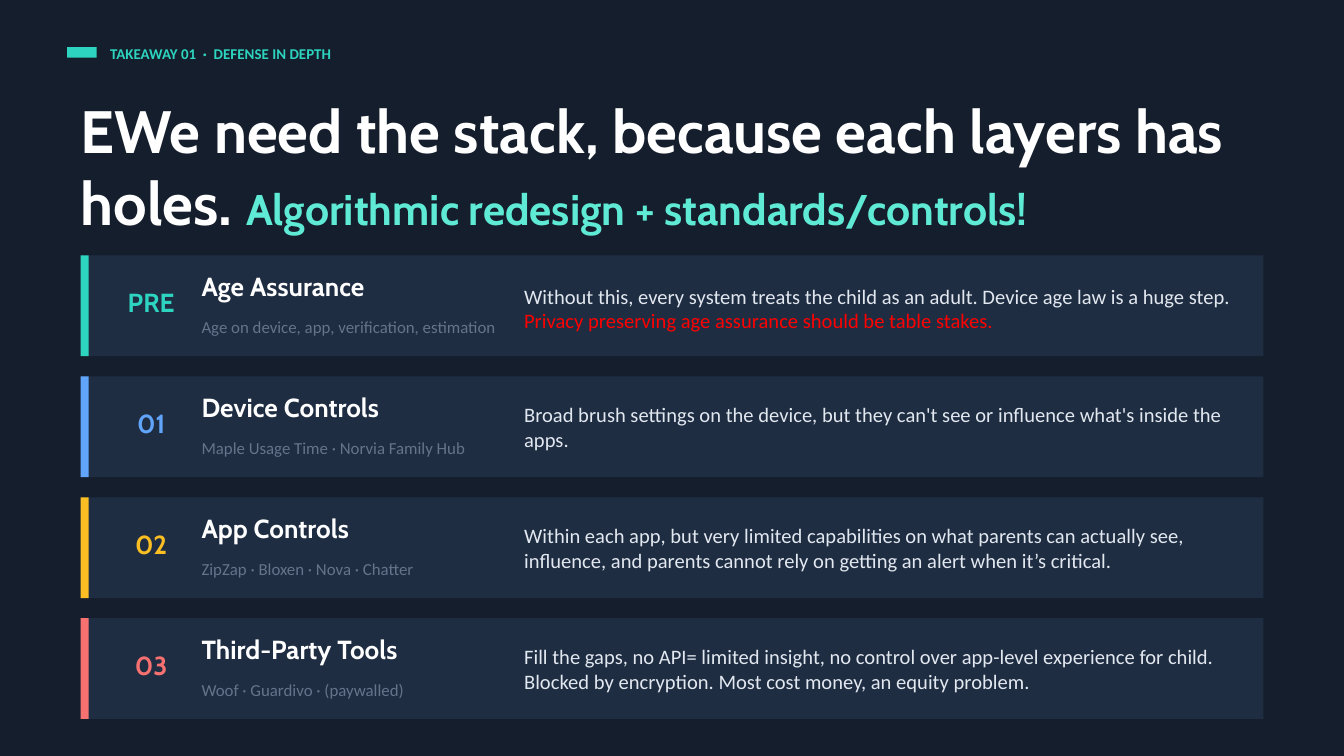
import pptx
import pptx.dml.color
import pptx.enum.shapes
import pptx.enum.text
import pptx.util

Pt = pptx.util.Pt
RGBColor = pptx.dml.color.RGBColor
Align = pptx.enum.text.PP_ALIGN
Anchor = pptx.enum.text.MSO_ANCHOR

NIGHT = RGBColor(0x15, 0x1E, 0x2C)
PANEL = RGBColor(0x1F, 0x2D, 0x42)
TEAL = RGBColor(0x2D, 0xD4, 0xBF)
MINT = RGBColor(0x5E, 0xEA, 0xD4)
BLUE = RGBColor(0x60, 0xA5, 0xFA)
AMBER = RGBColor(0xFB, 0xBF, 0x24)
CORAL = RGBColor(0xF8, 0x71, 0x71)
RED = RGBColor(0xFF, 0x00, 0x00)
WHITE = RGBColor(0xFF, 0xFF, 0xFF)
MIST = RGBColor(0xE2, 0xE8, 0xF0)
SLATE = RGBColor(0x64, 0x74, 0x8B)

HEADING_FONT = "Cabin"
BODY_FONT = "Calibri"
MARGIN = 43.2
CONTENT_WIDTH = 633.6
FIRST_LAYER_TOP = 136.8
LAYER_PITCH = 64.8
LAYER_HEIGHT = 54

LAYERS = [
    ("PRE", TEAL, "Age Assurance", "Age on device, app, verification, estimation", 26.6,
     [("Without this, every system treats the child as an adult. "
       "Device age law is a huge step. ", MIST),
      ("Privacy preserving age assurance should be table stakes.", RED)]),
    ("01", BLUE, "Device Controls", "Maple Usage Time · Norvia Family Hub", 23.8,
     [("Broad brush settings on the device, but they can't see or influence "
       "what's inside the apps.", MIST)]),
    ("02", AMBER, "App Controls", "ZipZap · Bloxen · Nova · Chatter", 23.8,
     [("Within each app, but very limited capabilities on what parents can actually see, "
       "influence, and parents cannot rely on getting an alert when it’s critical.", MIST)]),
    ("03", CORAL, "Third-Party Tools", "Woof · Guardivo · (paywalled)", 23.8,
     [("Fill the gaps, no API= limited insight, no control over app-level experience "
       "for child. Blocked by encryption. Most cost money, an equity problem.", MIST)]),
]


def add_block(slide, left, top, width, height, color):
    """Add a plain filled rectangle."""
    block = slide.shapes.add_shape(
        pptx.enum.shapes.MSO_SHAPE.RECTANGLE, Pt(left), Pt(top), Pt(width), Pt(height))
    block.shadow.inherit = False
    block.fill.solid()
    block.fill.fore_color.rgb = color
    block.line.fill.background()


def write_runs(frame, runs, font, bold, align, anchor):
    """Fill a text frame with one paragraph of (text, size, colour) runs."""
    frame.margin_left = frame.margin_top = frame.margin_right = frame.margin_bottom = 0
    frame.word_wrap = True
    frame.auto_size = pptx.enum.text.MSO_AUTO_SIZE.SHAPE_TO_FIT_TEXT
    frame.vertical_anchor = anchor
    paragraph = frame.paragraphs[0]
    paragraph.alignment = align
    for text, size, color in runs:
        run = paragraph.add_run()
        run.text = text
        run.font.name = font
        run.font.size = Pt(size)
        run.font.bold = bold
        run.font.color.rgb = color


def add_label(slide, left, top, width, height, runs, font=BODY_FONT, bold=False,
              align=Align.LEFT):
    """Add a vertically centred text box without margins."""
    label = slide.shapes.add_textbox(Pt(left), Pt(top), Pt(width), Pt(height))
    write_runs(label.text_frame, runs, font, bold, align, Anchor.MIDDLE)


def place_title(slide):
    """Position the title placeholder and write its two-tone headline."""
    title = slide.shapes.title
    title.left, title.top = Pt(MARGIN), Pt(50.4)
    title.width, title.height = Pt(CONTENT_WIDTH), Pt(77.8)
    headline = [("EWe need the stack, because each layers has holes. ", 32, WHITE),
                ("Algorithmic redesign + standards/controls!", 23, MINT)]
    write_runs(title.text_frame, headline, HEADING_FONT, True, Align.LEFT, Anchor.TOP)


def add_layer(slide, top, layer):
    """Add one layer of the stack: panel, accent, number, name, examples, description."""
    number, accent, name, examples, description_height, description = layer
    add_block(slide, MARGIN, top, CONTENT_WIDTH, LAYER_HEIGHT, PANEL)
    add_block(slide, MARGIN, top, 4.32, LAYER_HEIGHT, accent)
    add_label(slide, 61.2, top + 17.3, 39.6, 15.8, [(number, 14, accent)],
              HEADING_FONT, True, Align.CENTER)
    add_label(slide, 108, top + 8.6, 158.4, 15.8, [(name, 14, WHITE)], HEADING_FONT, True)
    add_label(slide, 108, top + 33.1, 158.4, 10.1, [(examples, 9, SLATE)])
    add_label(slide, 280.8, top + 15.1, 381.6, description_height,
              [(text, 11, color) for text, color in description])


def main():
    """Build and save the slide."""
    deck = pptx.Presentation()
    deck.slide_width, deck.slide_height = Pt(720), Pt(405)
    slide = deck.slides.add_slide(deck.slide_layouts[5])
    slide.background.fill.solid()
    slide.background.fill.fore_color.rgb = NIGHT

    add_block(slide, 36, 25.2, 15.84, 5.76, TEAL)
    add_label(slide, 59, 23.8, 504, 10.1, [("TAKEAWAY 01\u00a0 ·\u00a0 DEFENSE IN DEPTH".replace("\u00a0", " "), 8, TEAL)],
              bold=True)
    place_title(slide)
    for index, layer in enumerate(LAYERS):
        add_layer(slide, FIRST_LAYER_TOP + index * LAYER_PITCH, layer)

    deck.save("out.pptx")


if __name__ == "__main__":
    main()
